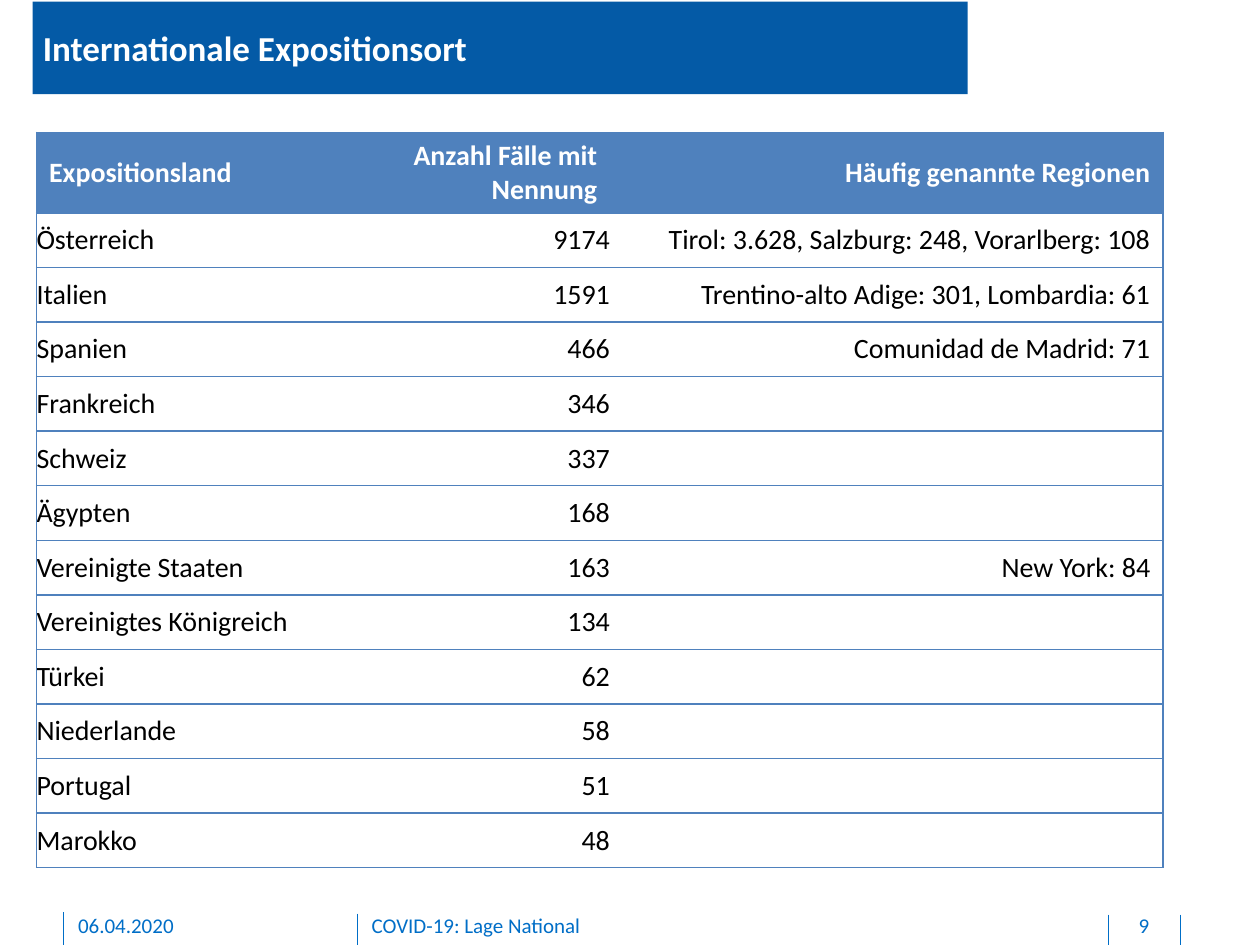
from dataclasses import dataclass
from typing import Optional

import lxml.etree
import pptx
import pptx.dml.color
import pptx.enum.shapes
import pptx.enum.text
import pptx.oxml.ns
import pptx.util

Inches = pptx.util.Inches
Align = pptx.enum.text.PP_ALIGN
Anchor = pptx.enum.text.MSO_ANCHOR
qn = pptx.oxml.ns.qn


@dataclass(frozen=True)
class Theme:
    font: str = "Calibri"
    title_fill: str = "045AA6"
    table_blue: str = "4F81BD"
    footer_blue: str = "006EC7"
    white: str = "FFFFFF"
    black: str = "000000"
    title_size: int = 20
    table_size: int = 16
    footer_size: int = 12
    table_border: float = 1
    footer_line: float = 0.5


@dataclass(frozen=True)
class Country:
    name: str
    cases: int
    regions: str = ""


@dataclass(frozen=True)
class FooterItem:
    text: str
    left: float
    width: float
    align: Align = Align.LEFT


@dataclass(frozen=True)
class Divider:
    x: float
    top: float


THEME = Theme()
NO_TABLE_STYLE = "{2D5ABB26-0587-4C30-8999-92F81FD0307C}"
SLIDE_HEIGHT = 7.5
TABLE_LEFT, TABLE_TOP, TABLE_HEIGHT = 0.29, 1.05, 5.84
HEADER_HEIGHT = 0.64
COLUMN_WIDTHS = (2.45, 2.1, 4.39)
HEADERS = ("Expositionsland", "Anzahl Fälle mit Nennung", "Häufig genannte Regionen")
COUNTRIES = (
    Country("Österreich", 9174, "Tirol: 3.628, Salzburg: 248, Vorarlberg: 108"),
    Country("Italien", 1591, "Trentino-alto Adige: 301, Lombardia: 61"),
    Country("Spanien", 466, "Comunidad de Madrid: 71"),
    Country("Frankreich", 346),
    Country("Schweiz", 337),
    Country("Ägypten", 168),
    Country("Vereinigte Staaten", 163, "New York: 84"),
    Country("Vereinigtes Königreich", 134),
    Country("Türkei", 62),
    Country("Niederlande", 58),
    Country("Portugal", 51),
    Country("Marokko", 48),
)
FOOTER_ITEMS = (
    FooterItem("06.04.2020", 0.62, 2.03),
    FooterItem("COVID-19: Lage National", 2.95, 5.67),
    FooterItem("9", 8.81, 0.54, Align.CENTER),
)
DIVIDERS = (Divider(0.5, 7.24), Divider(2.84, 7.25), Divider(8.8, 7.26), Divider(9.37, 7.26))


def rgb(color: str) -> pptx.dml.color.RGBColor:
    return pptx.dml.color.RGBColor.from_string(color)


def write_text(frame, text: str, *, size: int, color: str, bold: bool = False,
               align: Align = Align.LEFT) -> None:
    paragraph = frame.paragraphs[0]
    paragraph.alignment = align
    paragraph.space_before = pptx.util.Pt(0)
    paragraph.font.size = pptx.util.Pt(size)
    if text:
        run = paragraph.add_run()
        run.text = text
        run.font.name = THEME.font
        run.font.size = pptx.util.Pt(size)
        run.font.bold = bold
        run.font.color.rgb = rgb(color)


def set_margins(target, left: float = 0, bottom: float = 0) -> None:
    target.margin_left, target.margin_bottom = Inches(left), Inches(bottom)
    target.margin_right = target.margin_top = 0


def add_title(slide) -> None:
    title = slide.shapes.title
    title.left, title.top = Inches(0.26), Inches(0.21)
    title.width, title.height = Inches(7.42), Inches(0.34)
    title.fill.solid()
    title.fill.fore_color.rgb = rgb(THEME.title_fill)
    frame = title.text_frame
    set_margins(frame, left=0.08)
    frame.word_wrap = True
    frame.auto_size = pptx.enum.text.MSO_AUTO_SIZE.SHAPE_TO_FIT_TEXT
    frame.vertical_anchor = Anchor.MIDDLE
    write_text(frame, "Internationale Expositionsort", size=THEME.title_size,
               color=THEME.white, bold=True)


def set_borders(cell, column: int) -> None:
    """Rule above and below each cell, and close the table's outer sides."""
    sides = {"L": column == 0, "R": column == len(COLUMN_WIDTHS) - 1, "T": True, "B": True}
    properties = cell._tc.get_or_add_tcPr()
    for side, visible in sides.items():
        if visible:
            width = str(pptx.util.Pt(THEME.table_border))
            line = lxml.etree.SubElement(properties, qn(f"a:ln{side}"), w=width)
            fill = lxml.etree.SubElement(line, qn("a:solidFill"))
            lxml.etree.SubElement(fill, qn("a:srgbClr"), val=THEME.table_blue)


def fill_cell(cell, text: str, column: int, header: bool) -> None:
    set_borders(cell, column)
    cell.fill.solid()
    cell.fill.fore_color.rgb = rgb(THEME.table_blue if header else THEME.white)
    cell.vertical_anchor = Anchor.MIDDLE
    if not header and column < 2:
        set_margins(cell)
    write_text(cell.text_frame, text, size=THEME.table_size, bold=header,
               color=THEME.white if header else THEME.black,
               align=Align.RIGHT if column else Align.LEFT)


def add_country_table(slide) -> None:
    rows = [HEADERS] + [(country.name, str(country.cases), country.regions)
                        for country in COUNTRIES]
    table = slide.shapes.add_table(
        len(rows), len(COLUMN_WIDTHS), Inches(TABLE_LEFT), Inches(TABLE_TOP),
        Inches(sum(COLUMN_WIDTHS)), Inches(TABLE_HEIGHT)).table
    table.horz_banding = False
    table._tbl.tblPr.find(qn("a:tableStyleId")).text = NO_TABLE_STYLE
    for column, width in zip(table.columns, COLUMN_WIDTHS):
        column.width = Inches(width)
    row_height = (TABLE_HEIGHT - HEADER_HEIGHT) / len(COUNTRIES)
    for row_index, texts in enumerate(rows):
        header = row_index == 0
        table.rows[row_index].height = Inches(HEADER_HEIGHT if header else row_height)
        for column_index, text in enumerate(texts):
            fill_cell(table.cell(row_index, column_index), text, column_index, header)


def add_divider(slide, divider: Divider) -> None:
    connector = slide.shapes.add_connector(
        pptx.enum.shapes.MSO_CONNECTOR.STRAIGHT, Inches(divider.x), Inches(divider.top),
        Inches(divider.x), Inches(SLIDE_HEIGHT))
    connector.line.color.rgb = rgb(THEME.footer_blue)
    connector.line.width = pptx.util.Pt(THEME.footer_line)
    lxml.etree.SubElement(connector._element.spPr, qn("a:effectLst"))


def add_footer_item(slide, item: FooterItem) -> None:
    box = slide.shapes.add_textbox(Inches(item.left), Inches(7.24),
                                   Inches(item.width), Inches(0.21))
    frame = box.text_frame
    frame.word_wrap = True
    set_margins(frame, bottom=0.05)
    write_text(frame, item.text, size=THEME.footer_size, color=THEME.footer_blue,
               align=item.align)


def main() -> None:
    presentation = pptx.Presentation()
    presentation.slide_width = Inches(10)
    presentation.slide_height = Inches(SLIDE_HEIGHT)
    slide = presentation.slides.add_slide(presentation.slide_layouts[5])

    # Footer
    for divider in DIVIDERS:
        add_divider(slide, divider)
    for item in FOOTER_ITEMS:
        add_footer_item(slide, item)

    # Title bar and table
    add_title(slide)
    add_country_table(slide)
    presentation.save("out.pptx")


if __name__ == "__main__":
    main()
